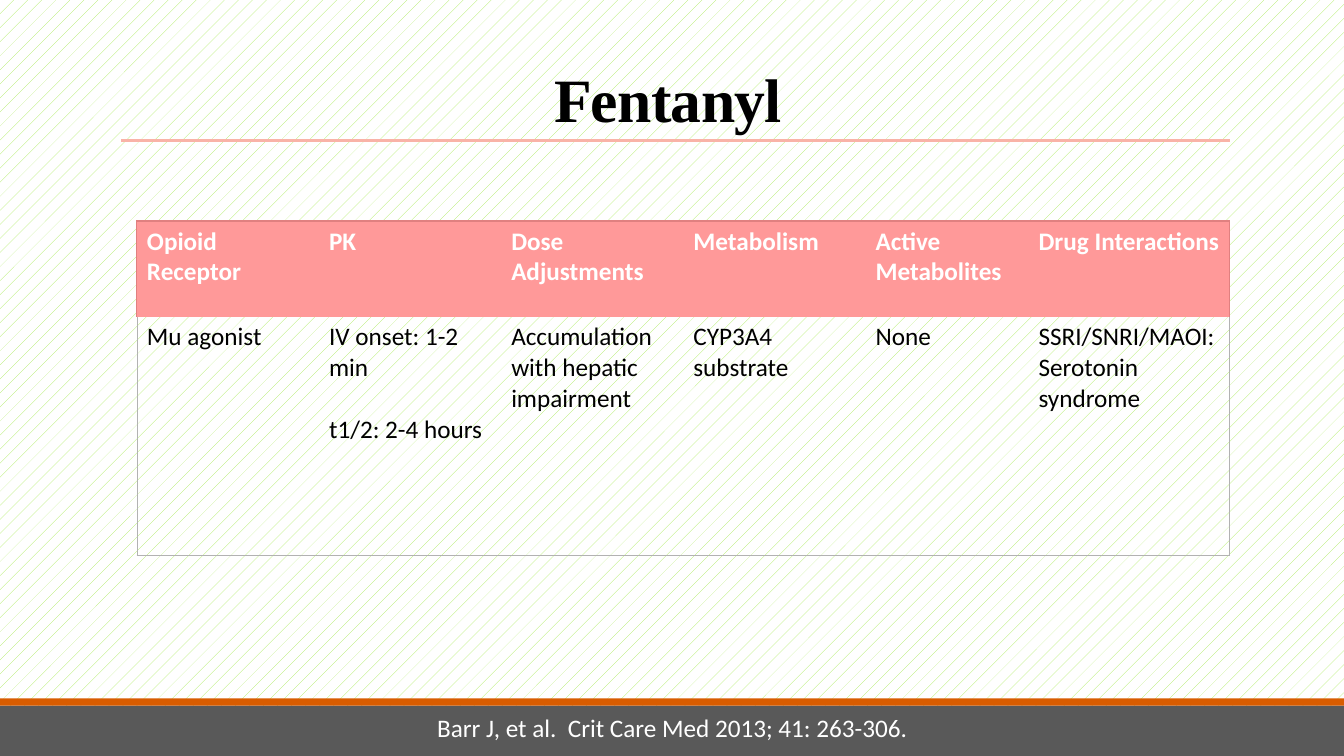
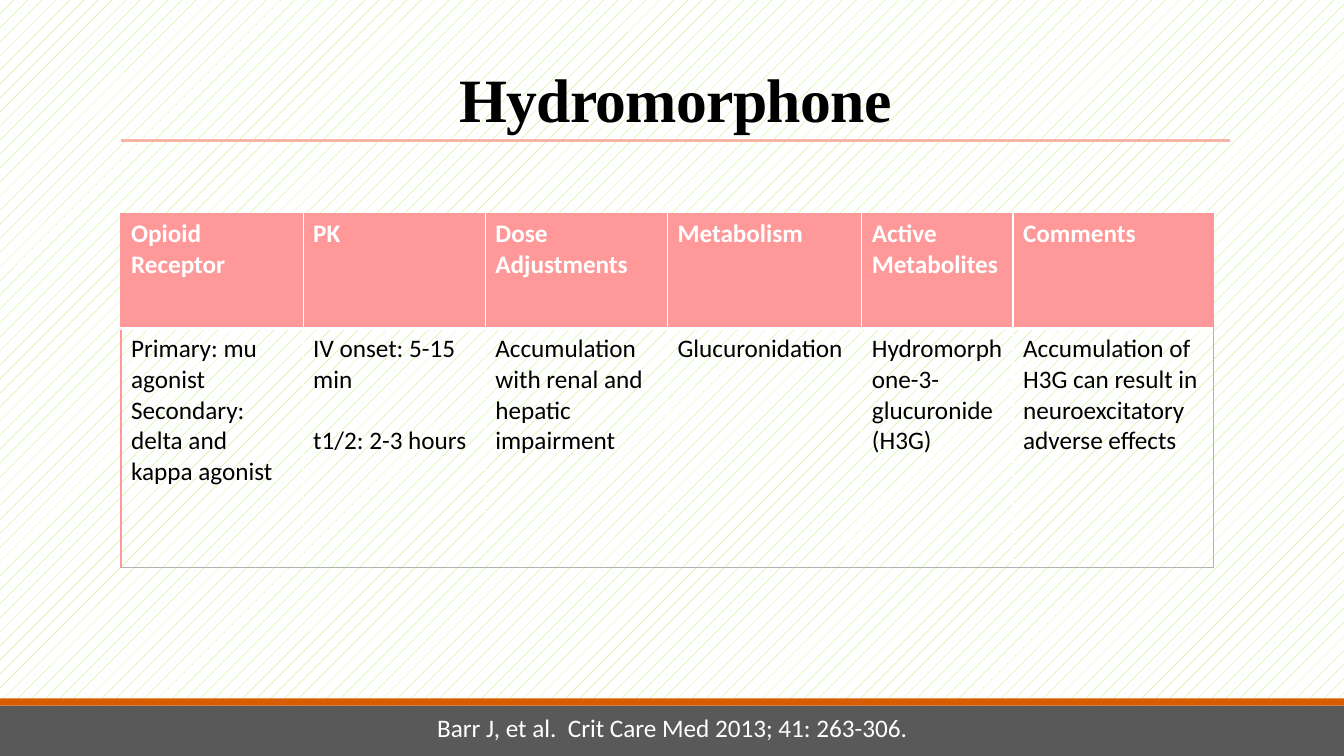
from lxml import etree
from pptx import Presentation
from pptx.dml.color import RGBColor
from pptx.enum import dml, shapes, text
from pptx.oxml.ns import qn
from pptx.util import Cm, Pt

WHITE, BLACK, PINK, GREY = "FFFFFF", "000000", "FF9999", "B2B2B2"
NO_GRID_STYLE = "{2D5ABB26-0587-4C30-8999-92F81FD0307C}"
CITATION = "Barr J, et al.  Crit Care Med 2013; 41: 263-306."
HEADINGS = ["Opioid Receptor", "PK", "Dose Adjustments", "Metabolism", "Active Metabolites"]

DRUGS = [
    dict(
        title="Fentanyl ", left=3.45, top=5.57,
        widths=[4.59, 4.59, 4.59, 4.59, 4.11, 5.06], heights=[2.41, 6.02],
        header_edge="E08080", body_left=GREY, inner=None,
        rows=[
            HEADINGS + ["Drug Interactions"],
            ["Mu agonist", "IV onset: 1-2 min\nt1/2: 2-4 hours",
             "Accumulation with hepatic impairment", "CYP3A4 substrate", "None",
             "SSRI/SNRI/MAOI: Serotonin syndrome"],
        ],
    ),
    dict(
        title="Hydromorphone", left=3.05, top=5.38,
        widths=[4.59, 4.59, 4.59, 4.9, 3.81, 5.06], heights=[2.9, 6.02],
        header_edge=PINK, body_left=PINK, inner=WHITE,
        rows=[
            HEADINGS + ["Comments"],
            ["Primary: mu agonist\nSecondary: delta and kappa agonist",
             "IV onset: 5-15 min\nt1/2: 2-3 hours",
             "Accumulation with renal and hepatic impairment", "Glucuronidation",
             "Hydromorphone-3-glucuronide (H3G)",
             "Accumulation of H3G can result in neuroexcitatory adverse effects"],
        ],
    ),
]


def colour(value):
    return RGBColor.from_string(value)


def style_text(frame, size, font, shade, bold=False):
    for para in frame.paragraphs:
        for span in para.runs:
            span.font.size = Pt(size)
            span.font.name = font
            span.font.bold = bold
            span.font.color.rgb = colour(shade)


deck = Presentation()
deck.slide_width, deck.slide_height = Cm(33.87), Cm(19.05)

# Patterned background, shared through the master
backdrop = deck.slide_master.background.fill
backdrop.patterned()
backdrop.pattern = dml.MSO_PATTERN.PERCENT_5
backdrop.fore_color.rgb = colour("A7EA52")
backdrop.back_color.rgb = colour(WHITE)

for drug in DRUGS:
    page = deck.slides.add_slide(deck.slide_layouts[6])

    # Footer bands
    for top, height, shade in [(17.78, 1.27, "595959"), (17.6, 0.18, "D85C00")]:
        band = page.shapes.add_shape(
            shapes.MSO_SHAPE.RECTANGLE, 0, Cm(top), deck.slide_width, Cm(height))
        band.shadow.inherit = False
        band.fill.solid()
        band.fill.fore_color.rgb = colour(shade)
        band.line.fill.background()

    # Rule under the title
    rule = page.shapes.add_connector(
        shapes.MSO_CONNECTOR.STRAIGHT, Cm(3.05), Cm(3.53), Cm(30.99), Cm(3.53))
    rule.line.color.rgb = colour("F9B3A7")
    rule.line.width = Pt(2.25)
    etree.SubElement(rule._element.spPr, qn("a:effectLst"))

    # Title
    title = page.shapes.add_textbox(Cm(3.05), Cm(0.79), Cm(27.94), Cm(2.74)).text_frame
    title.word_wrap = True
    title.vertical_anchor = text.MSO_ANCHOR.BOTTOM
    title.text = drug["title"]
    para = title.paragraphs[0]
    para.alignment = text.PP_ALIGN.CENTER
    para.line_spacing = 0.85
    style_text(title, 44, "Times New Roman", BLACK, bold=True)
    para.runs[0]._r.get_or_add_rPr().set("spc", "-50")

    # Table
    widths, heights = drug["widths"], drug["heights"]
    frame = page.shapes.add_table(
        len(heights), len(widths), Cm(drug["left"]), Cm(drug["top"]),
        Cm(sum(widths)), Cm(sum(heights)))
    table = frame.table
    table._tbl.tblPr.find(qn("a:tableStyleId")).text = NO_GRID_STYLE
    table.first_row = table.horz_banding = False
    for column, width in zip(table.columns, widths):
        column.width = Cm(width)
    for row, height in zip(table.rows, heights):
        row.height = Cm(height)

    inner, header_edge = drug["inner"], drug["header_edge"]
    for r, entries in enumerate(drug["rows"]):
        header = r == 0
        for c, entry in enumerate(entries):
            cell = table.cell(r, c)
            cell.text_frame.text = entry
            style_text(cell.text_frame, 18, "Calibri", WHITE if header else BLACK, header)
            if entry.startswith("IV onset"):
                cell.text_frame.paragraphs[1].space_before = Pt(22)

            # Borders: outer frame, inner grid, thick rule below the header
            left_edge = header_edge if header else drug["body_left"]
            right_edge = header_edge if header else GREY
            edges = [
                ("a:lnL", left_edge if c == 0 else inner, 1),
                ("a:lnR", right_edge if c == len(entries) - 1 else inner, 1),
                ("a:lnT", header_edge if header else inner, 1 if header else 3),
                ("a:lnB", inner if header else GREY, 3 if header else 1),
            ]
            for tag, shade, weight in edges:
                if shade:
                    points = 0.5 if shade == GREY else weight
                    edge = etree.SubElement(
                        cell._tc.get_or_add_tcPr(), qn(tag), w=str(Pt(points)))
                    solid = etree.SubElement(edge, qn("a:solidFill"))
                    etree.SubElement(solid, qn("a:srgbClr"), val=shade)

            if header:
                cell.fill.solid()
                cell.fill.fore_color.rgb = colour(PINK)
            else:
                cell.fill.background()

    # Citation
    citation = page.shapes.add_textbox(Cm(10.62), Cm(17.83), Cm(12.65), Cm(1.02)).text_frame
    citation.word_wrap = True
    citation.auto_size = text.MSO_AUTO_SIZE.SHAPE_TO_FIT_TEXT
    citation.text = CITATION
    citation.paragraphs[0].alignment = text.PP_ALIGN.CENTER
    style_text(citation, 18, "Calibri", WHITE)

deck.save("out.pptx")
